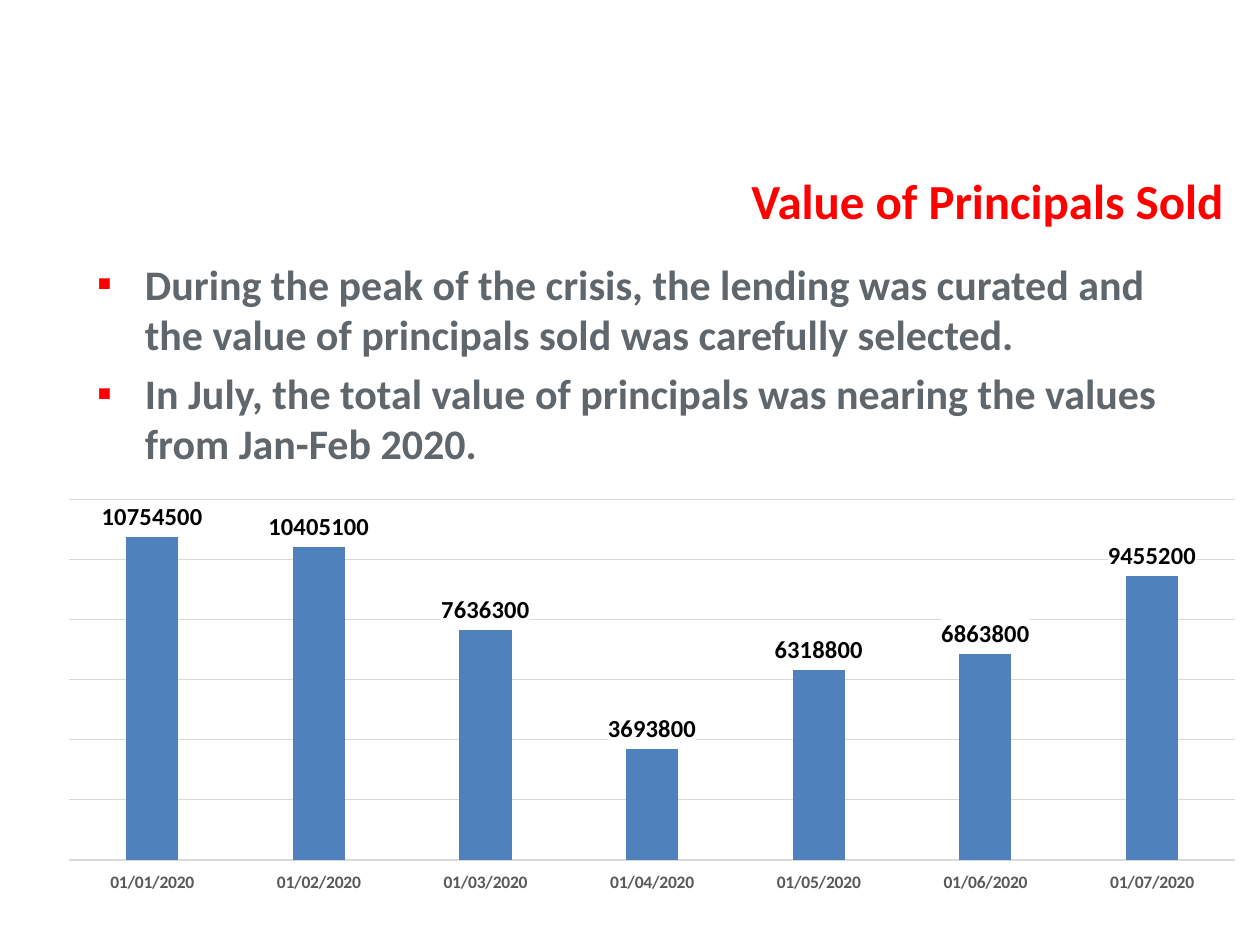
from lxml.etree import SubElement
from pptx import Presentation
from pptx.chart.data import CategoryChartData
from pptx.dml.color import RGBColor
from pptx.enum.chart import XL_CHART_TYPE, XL_LABEL_POSITION, XL_TICK_LABEL_POSITION, XL_TICK_MARK
from pptx.enum.text import MSO_ANCHOR, MSO_AUTO_SIZE, PP_ALIGN
from pptx.oxml import parse_xml
from pptx.oxml.ns import nsdecls, qn
from pptx.util import Inches, Pt

FONT = "Calibri"
RED, GREY, BLACK, WHITE = "FF0000", "5F666C", "000000", "FFFFFF"
AXIS_TEXT, RULE, BAR = "595959", "D9D9D9", "4F81BD"

BULLETS = [
    "During the peak of the crisis, the lending was curated and "
    "the value of principals sold was carefully selected.",
    "In July, the total value of principals was nearing the values from Jan-Feb 2020.",
]
MONTHS = [f"01/{month:02}/2020" for month in range(1, 8)]
VALUES = [10754500, 10405100, 7636300, 3693800, 6318800, 6863800, 9455200]


def rgb(color):
    return RGBColor.from_string(color)


def style(font, size, color, bold=True):
    font.name, font.size, font.bold = FONT, Pt(size), bold
    font.color.rgb = rgb(color)


def place(sp, box):
    sp.left, sp.top, sp.width, sp.height = map(Inches, box)


def frame(sp, box, anchor):
    """Place a placeholder and return its text frame, kept at full text size."""
    place(sp, box)
    tf = sp.text_frame
    tf.word_wrap, tf.auto_size, tf.vertical_anchor = True, MSO_AUTO_SIZE.NONE, anchor
    return tf


def add_title(s, box, text):
    p = frame(s.shapes.title, box, MSO_ANCHOR.MIDDLE).paragraphs[0]
    p.alignment = PP_ALIGN.RIGHT
    r = p.add_run()
    r.text = text
    style(r.font, 28, RED)


def add_bullet(p, char, color, indent):
    pPr = p._p.get_or_add_pPr()
    pPr.set("marL", str(Inches(indent)))
    pPr.set("indent", str(-Inches(indent)))
    SubElement(SubElement(pPr, qn("a:buClr")), qn("a:srgbClr"), val=color)
    SubElement(pPr, qn("a:buFont"), typeface=FONT)
    SubElement(pPr, qn("a:buChar"), char=char)


def add_body(s, box, items):
    tf = frame(s.placeholders[1], box, MSO_ANCHOR.TOP)
    for i, text in enumerate(items):
        p = tf.add_paragraph() if i else tf.paragraphs[0]
        add_bullet(p, "▪", RED, 0.38)
        p.space_before = Pt(4.8 if i else 0)
        r = p.add_run()
        r.text = text
        style(r.font, 24, GREY)


def set_plot_area(chart, x, y, w, h):
    """Fix the inner plot area, in shares of the chart."""
    plot_area = chart._chartSpace.chart.plotArea
    for old in plot_area.findall(qn("c:layout")):
        plot_area.remove(old)
    plot_area.insert(0, parse_xml(
        f'<c:layout {nsdecls("c")}><c:manualLayout><c:layoutTarget val="inner"/>'
        f'<c:xMode val="edge"/><c:yMode val="edge"/><c:x val="{x}"/><c:y val="{y}"/>'
        f'<c:w val="{w}"/><c:h val="{h}"/></c:manualLayout></c:layout>'))


def set_line(line):
    line.color.rgb, line.width = rgb(RULE), Pt(0.75)


def style_axes(chart):
    months, values = chart.category_axis, chart.value_axis
    months.major_tick_mark = months.minor_tick_mark = XL_TICK_MARK.NONE
    months.tick_label_position = XL_TICK_LABEL_POSITION.LOW
    style(months.tick_labels.font, 10, AXIS_TEXT)
    set_line(months.format.line)
    values.minimum_scale, values.maximum_scale, values.major_unit = 0, 12_000_000, 2_000_000
    values.has_major_gridlines = True
    set_line(values.major_gridlines.format.line)
    values.visible = False


def style_bars(plot):
    plot.gap_width, plot.overlap, plot.vary_by_categories = 219, -27, False
    series = plot.series[0]
    series.format.fill.solid()
    series.format.fill.fore_color.rgb = rgb(BAR)
    labels = series.data_labels
    labels.show_value, labels.position = True, XL_LABEL_POSITION.OUTSIDE_END
    style(labels.font, 14, BLACK)
    labels._element.find(qn("c:txPr")).addprevious(parse_xml(
        f'<c:spPr {nsdecls("c", "a")}><a:solidFill><a:srgbClr val="{WHITE}"/>'
        '</a:solidFill></c:spPr>'))


def add_column_chart(s, box):
    data = CategoryChartData(number_format="General")
    data.categories = MONTHS
    data.add_series("Series 1", VALUES)
    chart = s.shapes.add_chart(
        XL_CHART_TYPE.COLUMN_CLUSTERED, *map(Inches, box), data).chart
    chart.has_legend = chart.has_title = False
    style(chart.font, 10, BLACK, bold=False)
    set_plot_area(chart, 0.03, 0.04, 0.97, 0.86)
    style_axes(chart)
    style_bars(chart.plots[0])


def main():
    prs = Presentation()
    prs.slide_width, prs.slide_height = Inches(10), Inches(7.5)
    s = prs.slides.add_slide(prs.slide_layouts[1])
    add_title(s, (0.81, 1.31, 9, 0.56), "Value of Principals Sold")
    add_body(s, (0.67, 2, 9, 0.63), BULLETS)
    add_column_chart(s, (0.26, 3.83, 9.55, 3.33))
    prs.save("out.pptx")


if __name__ == "__main__":
    main()
